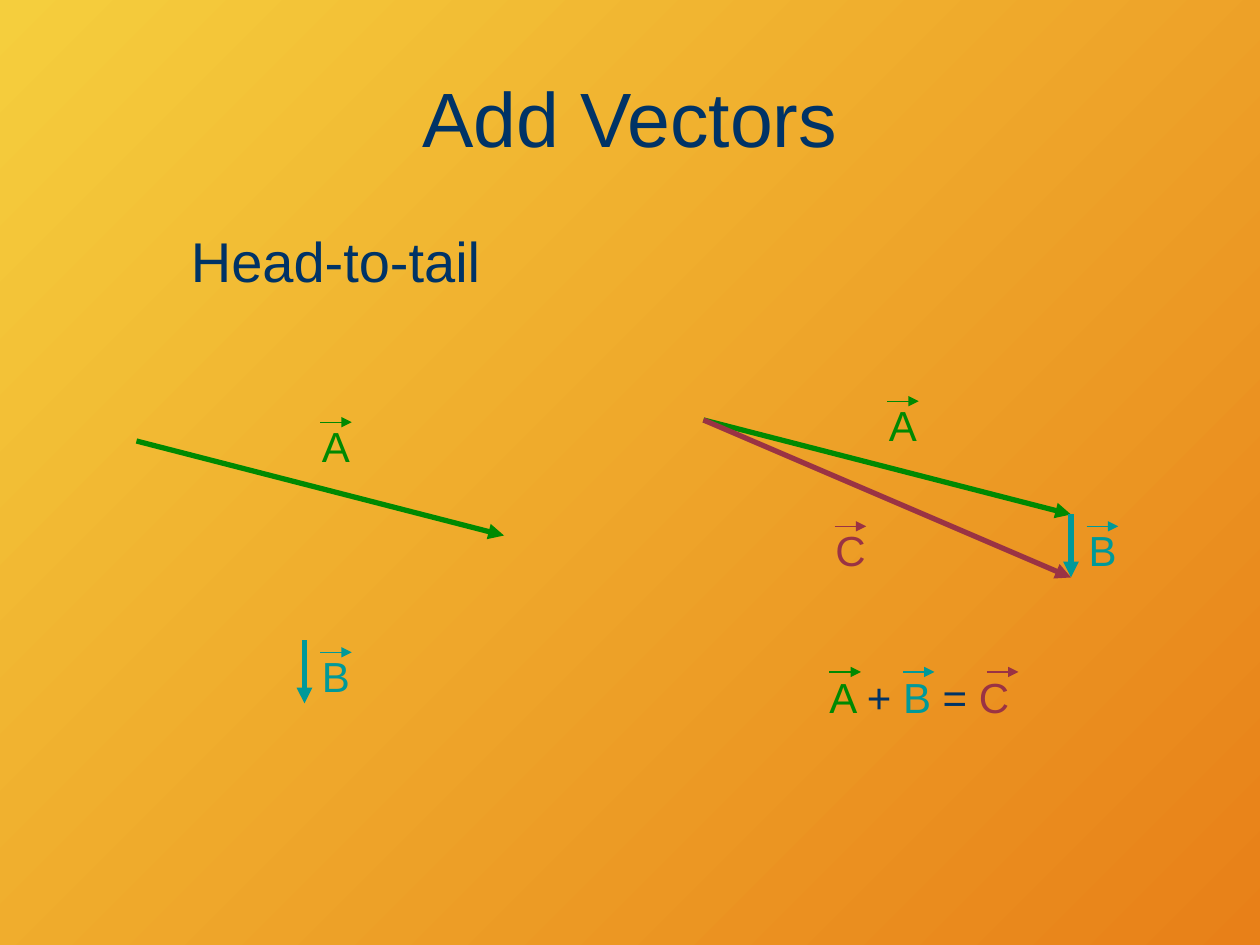
from dataclasses import dataclass

from lxml import etree
from pptx import Presentation
from pptx.dml.color import RGBColor
from pptx.enum.shapes import MSO_CONNECTOR
from pptx.enum.text import MSO_ANCHOR, PP_ALIGN
from pptx.oxml.ns import qn
from pptx.util import Pt

STRAIGHT = MSO_CONNECTOR.STRAIGHT
TOP, MIDDLE = MSO_ANCHOR.TOP, MSO_ANCHOR.MIDDLE
LEFT, CENTER = PP_ALIGN.LEFT, PP_ALIGN.CENTER


@dataclass(frozen=True)
class Theme:
    font: str = "Arial"
    title_size: float = 44
    heading_size: float = 32
    label_size: float = 24
    vector_width: float = 3
    mark_width: float = 0.75
    mark_length: float = 18
    ink: str = "003366"
    start: str = "F5CE3D"
    end: str = "E88018"


THEME = Theme()
VECTOR_COLORS = {"A": "008901", "B": "009999", "C": "9A3344"}
# Displacement of each vector, and of its label from the vector's tail
DELTAS = {"A": (210, 54), "B": (0, 36), "C": (210, 90)}
LABEL_OFFSETS = {"A": (102, -11.5), "B": (6, 6), "C": (72, 60)}


def add_text(slide, box, runs, *, size, align=LEFT, anchor=TOP, inset=(0, 0)):
    """Write one paragraph of (text, colour) runs; inset is horizontal, vertical."""
    frame = slide.shapes.add_textbox(*map(Pt, box)).text_frame
    frame.word_wrap = True
    frame.vertical_anchor = anchor
    frame.margin_left = frame.margin_right = Pt(inset[0])
    frame.margin_top = frame.margin_bottom = Pt(inset[1])
    paragraph = frame.paragraphs[0]
    paragraph.alignment = align
    for text, color in runs:
        run = paragraph.add_run()
        run.text = text
        run.font.name = THEME.font
        run.font.size = Pt(size)
        run.font.color.rgb = RGBColor.from_string(color)


def add_arrow(slide, tail, delta, color, width):
    x, y = tail
    dx, dy = delta
    arrow = slide.shapes.add_connector(
        STRAIGHT, Pt(x), Pt(y), Pt(x + dx), Pt(y + dy))
    arrow.line.color.rgb = RGBColor.from_string(color)
    arrow.line.width = Pt(width)
    etree.SubElement(arrow.line._get_or_add_ln(), qn("a:tailEnd"), type="triangle")
    etree.SubElement(arrow._element.spPr, qn("a:effectLst"))


def add_mark(slide, x, y, name):
    """Draw the small arrow that stands over a vector's letter."""
    add_arrow(slide, (x, y), (THEME.mark_length, 0),
              VECTOR_COLORS[name], THEME.mark_width)


def add_vector(slide, name, tail):
    color = VECTOR_COLORS[name]
    add_arrow(slide, tail, DELTAS[name], color, THEME.vector_width)
    x, y = (t + o for t, o in zip(tail, LABEL_OFFSETS[name]))
    add_text(slide, (x, y, 24, 28.8), [(name, color)],
             size=THEME.label_size, align=CENTER)
    add_mark(slide, x + 3, y + 0.75, name)


def add_background(slide):
    fill = slide.background.fill
    fill.gradient()
    fill.gradient_angle = 315
    for stop, color in zip(fill.gradient_stops, (THEME.start, THEME.end)):
        stop.color.rgb = RGBColor.from_string(color)


def add_title(slide, box):
    add_text(slide, box, [("Add Vectors", THEME.ink)], size=THEME.title_size,
             align=CENTER, anchor=MIDDLE, inset=(7.2, 3.6))


def add_heading(slide, box):
    add_text(slide, box, [("Head-to-tail", THEME.ink)],
             size=THEME.heading_size, inset=(7.2, 3.6))


def add_separate_vectors(slide, left, top):
    add_vector(slide, "A", (left, top))
    add_vector(slide, "B", (left + 96, top + 114))


def add_vector_sum(slide, left, top):
    """Place B's tail at A's head, and C from A's tail to B's head."""
    add_vector(slide, "A", (left, top))
    add_vector(slide, "C", (left, top))
    dx, dy = DELTAS["A"]
    add_vector(slide, "B", (left + dx, top + dy))


def add_formula(slide, box):
    parts = ("A ", "+ ", "B ", "= ", "C")
    runs = [(part, VECTOR_COLORS.get(part.strip(), THEME.ink)) for part in parts]
    add_text(slide, box, runs, size=THEME.label_size)
    left, top = box[:2]
    for name, offset in zip("ABC", (0, 42, 90)):
        add_mark(slide, left + offset, top, name)


def main():
    deck = Presentation()
    deck.slide_width, deck.slide_height = Pt(720), Pt(540)
    slide = deck.slides.add_slide(deck.slide_layouts[6])
    add_background(slide)
    add_title(slide, (36, 21.6, 648, 90))
    add_vector_sum(slide, 402, 240)
    add_formula(slide, (474, 384, 114, 28.8))
    add_heading(slide, (102, 126, 210, 54))
    add_separate_vectors(slide, 78, 252)
    deck.save("out.pptx")


if __name__ == "__main__":
    main()
